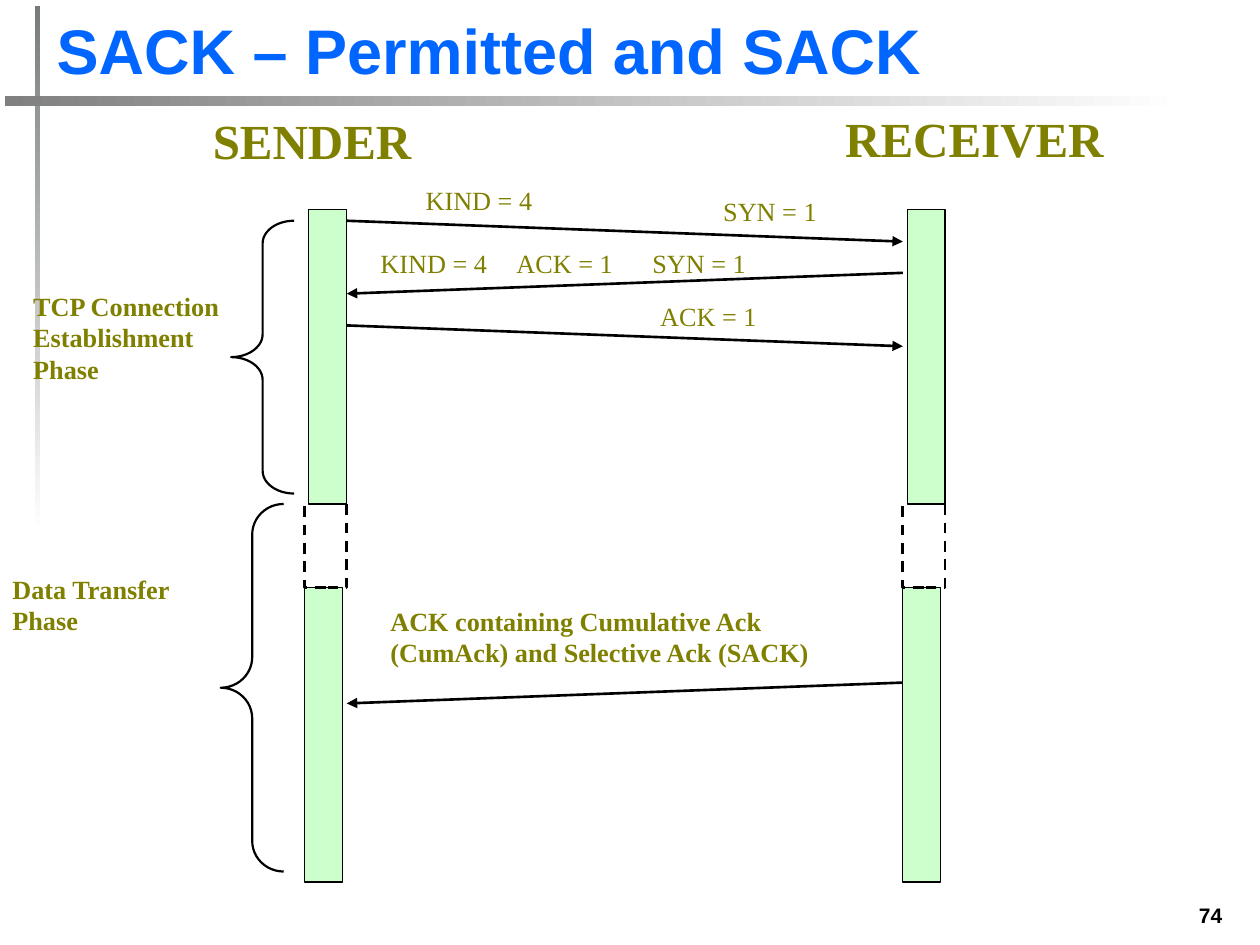
from pptx import Presentation
from pptx.dml.color import RGBColor
from pptx.enum import dml, shapes, text
from pptx.oxml.ns import qn
from pptx.util import Cm, Pt
from lxml import etree

BLACK = RGBColor(0x00, 0x00, 0x00)
WHITE = RGBColor(0xFF, 0xFF, 0xFF)
BLUE = RGBColor(0x00, 0x66, 0xFF)
OLIVE = RGBColor(0x80, 0x80, 0x00)
MINT = RGBColor(0xCC, 0xFF, 0xCC)
GREY = RGBColor(0x80, 0x80, 0x80)
GREEN_GREY = RGBColor(0x76, 0x7D, 0x79)
SERIF, SANS = "Times New Roman", "Arial"

# Content; all lengths in cm
TITLE = "SACK – Permitted and SACK"
PAGE = "74"
RULES = [  # left, top, width, height, colour, gradient angle
    (0.71, 0.13, 0.1, 10.59, GREEN_GREY, 270),
    (0.1, 1.93, 23.8, 0.2, GREY, 0),
]
HEADINGS = [("SENDER", 4.04, 2.11, 4.57), ("RECEIVER", 16.79, 2.06, 5.77)]
FLAGS = [  # text, left, top, width
    ("KIND = 4", 8.33, 3.6, 2.74),
    ("SYN = 1", 14.33, 3.81, 2.46),
    ("KIND = 4", 7.42, 4.87, 2.74),
    ("ACK = 1", 10.16, 4.87, 2.46),
    ("SYN = 1", 12.9, 4.87, 2.46),
    ("ACK = 1", 13.06, 5.93, 2.46),
]
NOTES = [  # text, left, top, width, height
    ("TCP Connection Establishment Phase", 0.42, 5.72, 5.08, 2.16),
    ("Data Transfer Phase", 0, 11.43, 5.08, 1.52),
    ("ACK containing Cumulative Ack (CumAck) and Selective Ack (SACK)",
     7.62, 12.07, 10.16, 1.52),
]
MESSAGES = [(4.45, True), (5.5, False), (6.56, True), (13.76, False)]  # top, sent by sender
BRACES = [(4.66, 4.45, 5.5, 0.361), (4.45, 10.16, 7.41, 0.486)]  # left, top, height, curl

# Timeline geometry
SENDER_X, RECEIVER_X = 6.99, 18.2
MESSAGE_DROP = 0.42
BAR_W, BAR_H = 0.76, 5.93
BARS = [(6.22, 4.23), (18.29, 4.23), (6.14, 11.85), (18.2, 11.85)]
GAPS_X, GAP_TOP, GAP_W, GAP_H = (6.14, 18.2), 10.16, 0.85, 1.69

prs = Presentation()
prs.slide_width, prs.slide_height = Cm(25.4), Cm(19.05)
slide = prs.slides.add_slide(prs.slide_layouts[5])


def write(frame, words, size, font, colour, bold, align=text.PP_ALIGN.LEFT):
    paragraph = frame.paragraphs[0]
    paragraph.alignment = align
    run = paragraph.add_run()
    run.text = words
    run.font.size, run.font.name, run.font.bold = Pt(size), font, bold
    run.font.color.rgb = colour


def add_label(words, left, top, width, height, size, bold=True, wrap=False,
              font=SERIF, colour=OLIVE, align=text.PP_ALIGN.LEFT):
    frame = slide.shapes.add_textbox(Cm(left), Cm(top), Cm(width), Cm(height)).text_frame
    frame.word_wrap = wrap
    write(frame, words, size, font, colour, bold, align)


def add_outline(kind, left, top, width, height, line_width=None, fill=None):
    shape = slide.shapes.add_shape(kind, Cm(left), Cm(top), Cm(width), Cm(height))
    shape.shadow.inherit = False
    if fill is None:
        shape.fill.background()
    else:
        shape.fill.solid()
        shape.fill.fore_color.rgb = fill
    if line_width is None:
        shape.line.fill.background()
    else:
        shape.line.color.rgb = BLACK
        shape.line.width = Pt(line_width)
    return shape


def add_message(top, from_sender):
    start, end = (SENDER_X, RECEIVER_X) if from_sender else (RECEIVER_X, SENDER_X)
    arrow = slide.shapes.add_connector(shapes.MSO_CONNECTOR.STRAIGHT, Cm(start), Cm(top),
                                       Cm(end), Cm(top + MESSAGE_DROP))
    arrow.line.color.rgb = BLACK
    arrow.line.width = Pt(1.5)
    etree.SubElement(arrow.line._get_or_add_ln(), qn("a:tailEnd"), type="triangle")
    etree.SubElement(arrow._element.spPr, qn("a:effectLst"))


RECT = shapes.MSO_SHAPE.RECTANGLE

# Page number and fading rules
add_label(PAGE, 23.29, 18.06, 1.6, 0.76, 12, wrap=True, font=SANS, colour=BLACK,
          align=text.PP_ALIGN.RIGHT)
for left, top, width, height, colour, angle in RULES:
    rule = add_outline(RECT, left, top, width, height)
    rule.fill.gradient()
    rule.fill.gradient_angle = angle
    for stop, stop_colour in zip(rule.fill.gradient_stops, (colour, WHITE)):
        stop.color.rgb = stop_colour

# Title
title = slide.shapes.title
title.left, title.top, title.width, title.height = Cm(0.89), Cm(0.08), Cm(23.8), Cm(1.8)
title.text_frame.vertical_anchor = text.MSO_ANCHOR.BOTTOM
write(title.text_frame, TITLE, 36, SANS, BLUE, True)

# Sender and receiver timelines, with a dashed break
for left, top in BARS:
    add_outline(RECT, left, top, BAR_W, BAR_H, 0.75, MINT)
for left in GAPS_X:
    gap = add_outline(RECT, left, GAP_TOP, GAP_W, GAP_H, 1.5)
    gap.line.dash_style = dml.MSO_LINE.DASH

# Phase braces
for left, top, height, curl in BRACES:
    brace = add_outline(shapes.MSO_SHAPE.LEFT_BRACE, left, top, 1.27, height, 1.25)
    brace.adjustments[0] = curl
    brace.adjustments[1] = 0.5

# Messages and labels
for top, from_sender in MESSAGES:
    add_message(top, from_sender)
for words, left, top, width in HEADINGS:
    add_label(words, left, top, width, 1.45, 28)
for words, left, top, width in FLAGS:
    add_label(words, left, top, width, 0.89, 15, bold=False)
for words, left, top, width, height in NOTES:
    add_label(words, left, top, width, height, 15, wrap=True)

prs.save("out.pptx")
